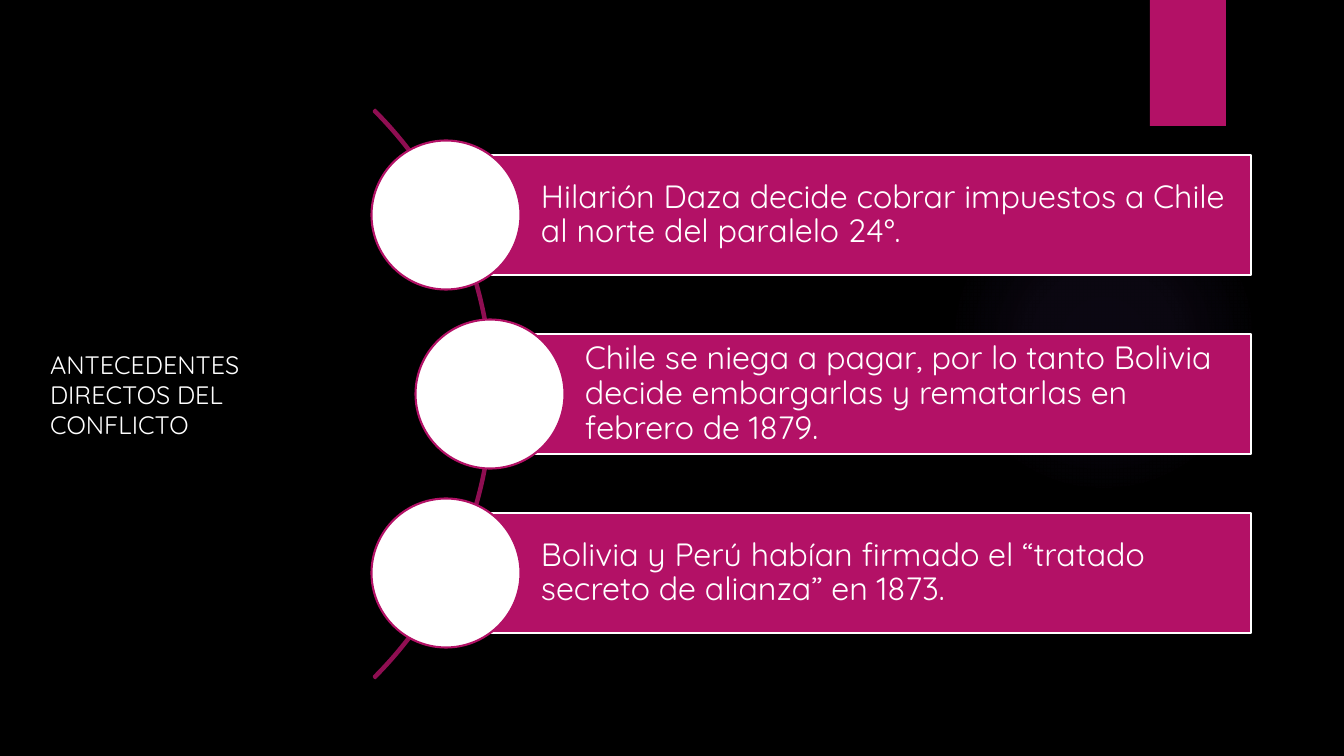
"""Build the slide on the direct causes of the conflict."""
from dataclasses import dataclass

from lxml import etree
from pptx import Presentation
from pptx.dml.color import RGBColor
from pptx.enum.shapes import MSO_SHAPE
from pptx.enum.text import MSO_ANCHOR, PP_ALIGN
from pptx.oxml import parse_xml
from pptx.oxml.ns import nsdecls
from pptx.util import Emu, Pt

RECTANGLE = MSO_SHAPE.RECTANGLE
OVAL = MSO_SHAPE.OVAL
BLOCK_ARC = MSO_SHAPE.BLOCK_ARC
LEFT = PP_ALIGN.LEFT
TOP = MSO_ANCHOR.TOP
MIDDLE = MSO_ANCHOR.MIDDLE

TITLE = "ANTECEDENTES DIRECTOS DEL CONFLICTO"
CAUSES = [
    ("Hilarión Daza decide cobrar impuestos a Chile al norte del paralelo 24°.", 446),
    ("Chile se niega a pagar, por lo tanto Bolivia decide embargarlas y "
     "rematarlas en febrero de 1879.", 490),
    ("Bolivia y Perú habían firmado el “tratado secreto de alianza” en 1873.", 446),
]
GLOW_STOPS = [(0, 7), (36, 6), (69, 0)]

EMU_PER_PX = 914400 / 100.8
MIDDLE_Y = 394
ROW_PITCH = 179
BAR_RIGHT = 1251
BAR_HEIGHT = 120
CIRCLE_SIZE = 149
ARC_CENTRE_X = 91
ARC_SIZE = 804


@dataclass(frozen=True)
class Theme:
    """Colours, font and type sizes."""
    black: RGBColor = RGBColor(0x00, 0x00, 0x00)
    white: RGBColor = RGBColor(0xFF, 0xFF, 0xFF)
    magenta: RGBColor = RGBColor(0xB3, 0x11, 0x66)
    plum: RGBColor = RGBColor(0x8F, 0x0E, 0x52)
    violet: RGBColor = RGBColor(0x9B, 0x6B, 0xF2)
    font: str = "Quicksand"
    title_size: int = 18
    body_size: int = 23
    line_width: float = 1.5


THEME = Theme()


def px(length):
    """Turn pixels into EMU."""
    return Emu(round(length * EMU_PER_PX))


def add_figure(page, kind, left, top, width, height, fill=None, line=None):
    """Add a flat preset shape."""
    shape = page.shapes.add_shape(kind, px(left), px(top), px(width), px(height))
    shape.shadow.inherit = False
    if fill is None:
        shape.fill.background()
    else:
        shape.fill.solid()
        shape.fill.fore_color.rgb = fill
    if line is None:
        shape.line.fill.background()
    else:
        shape.line.color.rgb = line
        shape.line.width = Pt(THEME.line_width)
    return shape


def write(shape, text, size, anchor):
    """Write one left-aligned white paragraph into a shape."""
    frame = shape.text_frame
    frame.word_wrap = True
    frame.vertical_anchor = anchor
    frame.text = text
    para = frame.paragraphs[0]
    para.alignment = LEFT
    para.font.name = THEME.font
    para.font.size = Pt(size)
    para.font.color.rgb = THEME.white
    return para


def add_glow(page):
    """Add the faint radial glow."""
    glow = add_figure(page, OVAL, 949, 184, 310, 310)
    stops = "".join(
        f'<a:gs pos="{place * 1000}"><a:srgbClr val="{THEME.violet}">'
        f'<a:alpha val="{alpha * 1000}"/></a:srgbClr></a:gs>'
        for place, alpha in GLOW_STOPS)
    gradient = parse_xml(
        f'<a:gradFill {nsdecls("a")}><a:gsLst>{stops}</a:gsLst><a:path path="circle">'
        '<a:fillToRect l="50000" t="50000" r="50000" b="50000"/></a:path></a:gradFill>')
    properties = glow.element.spPr
    properties.replace(properties.find("{*}noFill"), gradient)


def add_arc(page):
    """Add the thin arc that links the circles."""
    arc = add_figure(page, BLOCK_ARC, ARC_CENTRE_X - ARC_SIZE / 2,
                     MIDDLE_Y - ARC_SIZE / 2, ARC_SIZE, ARC_SIZE, line=THEME.plum)
    for index, value in enumerate((189, 27, 0.003)):
        arc.adjustments[index] = value
    outline = arc.line.fill._xPr
    etree.SubElement(outline, outline.tag.replace("}ln", "}round"))


def add_cause(page, text, centre_x, centre_y):
    """Add one bar with its circle."""
    bar = add_figure(page, RECTANGLE, centre_x, centre_y - BAR_HEIGHT / 2,
                     BAR_RIGHT - centre_x, BAR_HEIGHT, THEME.magenta, THEME.white)
    frame = bar.text_frame
    frame.margin_left = px(95)
    frame.margin_right = frame.margin_top = frame.margin_bottom = px(6)
    para = write(bar, text, THEME.body_size, MIDDLE)
    para.line_spacing = 0.9
    add_figure(page, OVAL, centre_x - CIRCLE_SIZE / 2, centre_y - CIRCLE_SIZE / 2,
               CIRCLE_SIZE, CIRCLE_SIZE, THEME.white, THEME.magenta)


def main():
    """Build and save the deck."""
    deck = Presentation()
    deck.slide_width, deck.slide_height = px(1344), px(756)
    page = deck.slides.add_slide(deck.slide_layouts[5])
    page.background.fill.solid()
    page.background.fill.fore_color.rgb = THEME.black

    title = page.shapes.title
    title.left, title.top, title.width, title.height = map(px, (40, 344, 276, 102))
    write(title, TITLE, THEME.title_size, TOP)

    add_glow(page)
    add_figure(page, RECTANGLE, 1150, 0, 76, 126, THEME.magenta)
    add_arc(page)
    for row, (text, centre_x) in enumerate(CAUSES):
        add_cause(page, text, centre_x, MIDDLE_Y + (row - 1) * ROW_PITCH)
    deck.save("out.pptx")


if __name__ == "__main__":
    main()
